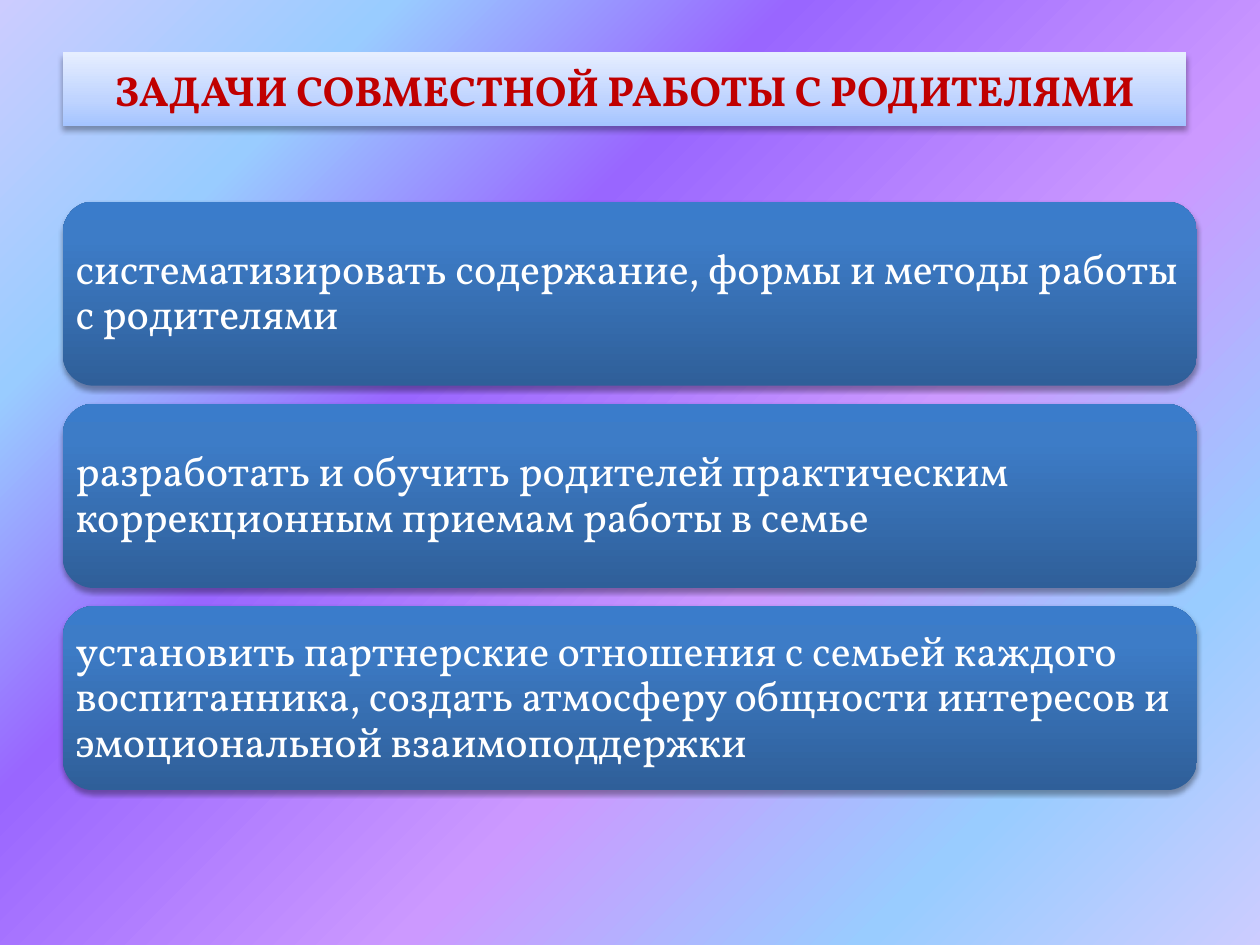
from dataclasses import dataclass

from pptx import Presentation
from pptx.dml.color import RGBColor
from pptx.enum.shapes import MSO_SHAPE
from pptx.enum.text import MSO_ANCHOR, PP_ALIGN
from pptx.oxml.ns import qn
from pptx.util import Pt
from lxml.etree import SubElement


@dataclass(frozen=True)
class Theme:
    font: str = "Vollkorn"
    text_size: int = 24
    heading_color: str = "C00000"
    task_color: str = "FFFFFF"
    shadow_color: str = "000000"
    background: tuple = ((0, "CCCCFF"), (18, "99CCFF"), (36, "9966FF"),
                         (61, "CC99FF"), (82, "99CCFF"), (100, "CCCCFF"))
    banner: tuple = ((0, "A4C4FF"), (35, "BFD4FF"), (100, "E6EEFF"))
    panel: tuple = ((0, "2F5F99"), (80, "3D7CC7"), (100, "3A7CCB"))


THEME = Theme()
SLIDE_WIDTH, SLIDE_HEIGHT = 720, 540
LEFT = 36
TASK_TOP, TASK_WIDTH, TASK_HEIGHT, TASK_PITCH = 115.2, 648, 105.2, 115.6

HEADING = "ЗАДАЧИ СОВМЕСТНОЙ РАБОТЫ С РОДИТЕЛЯМИ"
TASKS = (
    "систематизировать содержание, формы и методы работы с родителями",
    "разработать и обучить родителей практическим коррекционным приемам работы в семье",
    "установить партнерские отношения с семьей каждого воспитанника, "
    "создать атмосферу общности интересов и эмоциональной взаимоподдержки",
)


def apply_format(target, values):
    for name, value in values.items():
        setattr(target, name, value)


def paint_gradient(fill, owner, stops, angle):
    """Fill with any number of stops; angle runs counter-clockwise."""
    fill.gradient()
    fill.gradient_angle = angle
    stop_list = next(owner.iter(qn("a:gsLst")))
    stop_list.clear()
    for percent, color in stops:
        stop = SubElement(stop_list, qn("a:gs"), pos=str(percent * 1000))
        SubElement(stop, qn("a:srgbClr"), val=color)


def cast_shadow(shape, opacity, blur, distance):
    shape.shadow.inherit = False
    effects = shape.element.spPr.find(qn("a:effectLst"))
    shadow = SubElement(effects, qn("a:outerShdw"), blurRad=str(Pt(blur)),
                        dist=str(Pt(distance)), dir="5400000", rotWithShape="0")
    color = SubElement(shadow, qn("a:srgbClr"), val=THEME.shadow_color)
    SubElement(color, qn("a:alpha"), val=str(opacity * 1000))


def add_panel(slide, kind, box, stops, shadow):
    panel = slide.shapes.add_shape(kind, *(Pt(length) for length in box))
    paint_gradient(panel.fill, panel.element, stops, 90)
    panel.line.fill.background()
    cast_shadow(panel, *shadow)
    return panel


def write_text(panel, text, color, inset, paragraph_format, bold=False):
    frame = panel.text_frame
    apply_format(frame, {"word_wrap": True, "vertical_anchor": MSO_ANCHOR.MIDDLE,
                         "margin_left": Pt(inset), "margin_right": Pt(inset),
                         "margin_top": Pt(inset), "margin_bottom": Pt(inset)})
    paragraph = frame.paragraphs[0]
    apply_format(paragraph, paragraph_format)
    run = paragraph.add_run()
    run.text = text
    apply_format(run.font, {"name": THEME.font, "size": Pt(THEME.text_size),
                            "bold": bold})
    run.font.color.rgb = RGBColor.from_string(color)


def add_heading(slide):
    banner = add_panel(slide, MSO_SHAPE.RECTANGLE, (LEFT, 30, 642, 42),
                       THEME.banner, (32, 3.5, 2.2))
    write_text(banner, HEADING, THEME.heading_color, 3.6,
               {"alignment": PP_ALIGN.CENTER}, bold=True)


def add_task(slide, index, text):
    box = (LEFT, TASK_TOP + index * TASK_PITCH, TASK_WIDTH, TASK_HEIGHT)
    panel = add_panel(slide, MSO_SHAPE.ROUNDED_RECTANGLE, box,
                      THEME.panel, (35, 3.1, 1.8))
    # The rounded corners add about 5 pt to this inset.
    write_text(panel, text, THEME.task_color, 2.05,
               {"alignment": PP_ALIGN.LEFT, "line_spacing": 0.9})


def main():
    presentation = Presentation()
    apply_format(presentation, {"slide_width": Pt(SLIDE_WIDTH),
                                "slide_height": Pt(SLIDE_HEIGHT)})
    slide = presentation.slides.add_slide(presentation.slide_layouts[6])
    paint_gradient(slide.background.fill, slide.element, THEME.background, -45 % 360)
    add_heading(slide)
    for index, text in enumerate(TASKS):
        add_task(slide, index, text)
    presentation.save("out.pptx")


if __name__ == "__main__":
    main()
